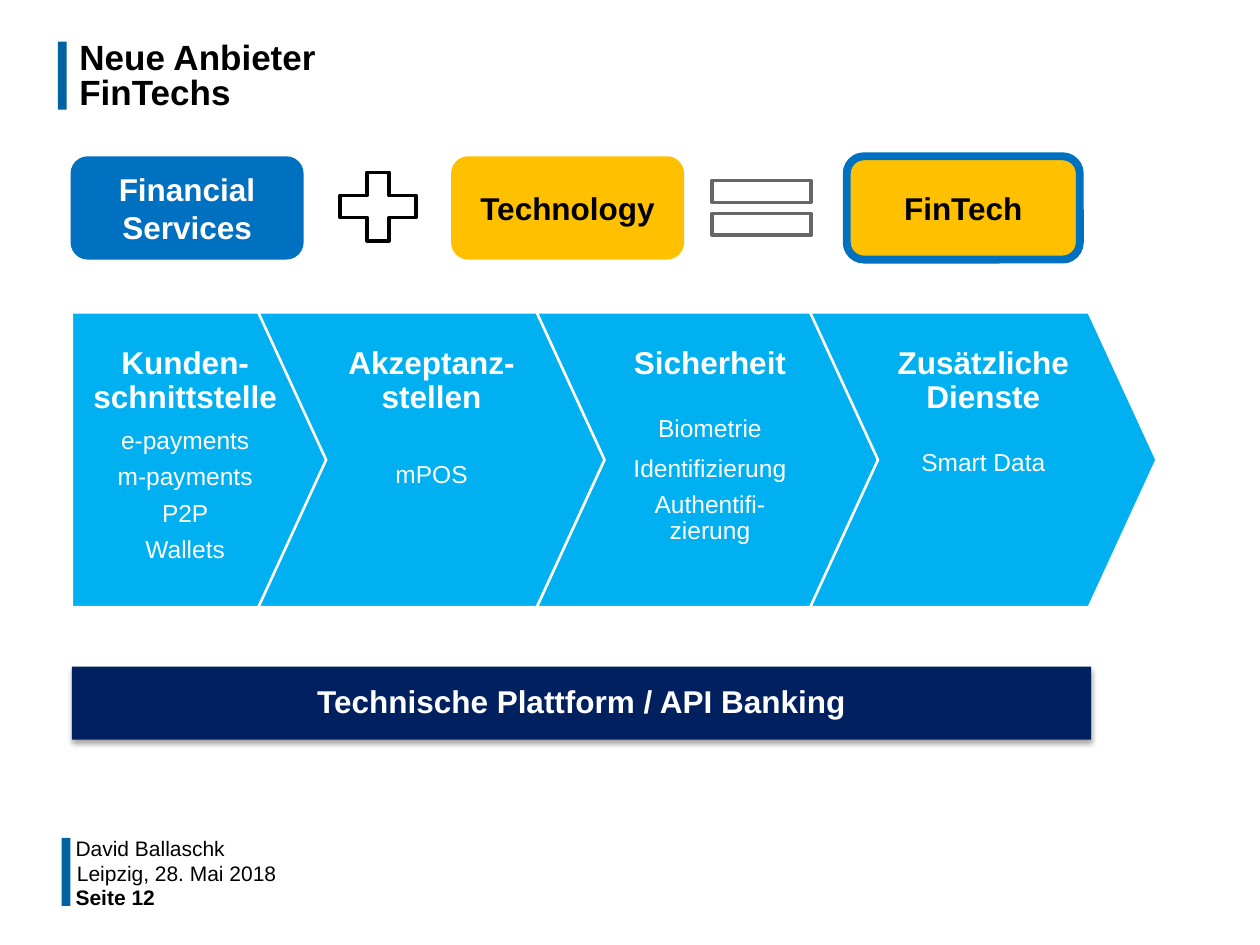
from lxml import etree
from pptx import Presentation
from pptx.dml.color import RGBColor
from pptx.enum.shapes import MSO_SHAPE
from pptx.enum.text import MSO_ANCHOR, PP_ALIGN
from pptx.oxml.ns import qn
from pptx.util import Inches, Pt

RECTANGLE, ROUNDED = MSO_SHAPE.RECTANGLE, MSO_SHAPE.ROUNDED_RECTANGLE
PLUS, EQUAL = MSO_SHAPE.MATH_PLUS, MSO_SHAPE.MATH_EQUAL
PENTAGON, CHEVRON = MSO_SHAPE.PENTAGON, MSO_SHAPE.CHEVRON
TOP, MIDDLE = MSO_ANCHOR.TOP, MSO_ANCHOR.MIDDLE
LEFT, CENTER = PP_ALIGN.LEFT, PP_ALIGN.CENTER

TITLE = "Neue Anbieter \vFinTechs"
FORMULA = [
    (ROUNDED, (0.56, 1.24, 1.85, 0.82), "Financial Services", "blue", "white", None),
    (PLUS, (2.59, 1.27, 0.82, 0.74), "", "white", "black", ("black", 2)),
    (ROUNDED, (3.58, 1.24, 1.85, 0.82), "Technology", "amber", "black", None),
    (EQUAL, (5.51, 1.28, 1.07, 0.74), "", "white", "black", ("gray", 2)),
    (ROUNDED, (6.72, 1.24, 1.85, 0.82), "FinTech", "amber", "black", ("blue", 4.5)),
]
STEPS = [
    (PENTAGON, 0.57, 2.11, 0.294, "Kunden-schnittstelle", 7.2,
     [("e-payments", 5.6), ("m-payments", 5.6), ("P2P", 5.6), ("Wallets", 0)]),
    (CHEVRON, 2.05, 2.75, 0.23, "Akzeptanz-stellen", 26.8, [("mPOS", 0)]),
    (CHEVRON, 4.26, 2.75, 0.23, "Sicherheit", 20,
     [("Biometrie", 7.2), ("Identifizierung", 5.6), ("Authentifi-\vzierung", 0)]),
    (CHEVRON, 6.43, 2.75, 0.23, "Zusätzliche Dienste", 20, [("Smart Data", 0)]),
]
STEP_TOP, STEP_HEIGHT = 2.48, 2.34
PLATFORM = "Technische Plattform / API Banking"
FOOTER = [
    ("David Ballaschk", 0.51, 6.64, False),
    ("Leipzig, 28. Mai 2018", 0.52, 6.84, False),
    ("Seite 12", 0.51, 7.03, True),
]
ACCENT_BARS = [(0.46, 0.33, 0.07, 0.54), (0.49, 6.65, 0.07, 0.54)]

THEME = {
    "font": "Arial",
    "sizes": {"title": 20, "heading": 18, "item": 14, "footer": 12},
    "colors": {"black": "000000", "white": "FFFFFF", "gray": "666666",
               "accent": "0062A1", "blue": "0070C0", "amber": "FFC000",
               "sky": "00B0F0", "navy": "002060"},
}


def color(name):
    return RGBColor.from_string(THEME["colors"][name])


def apply(target, values):
    for name, value in values.items():
        setattr(target, name, value)


def format_frame(frame, anchor, insets=(0.1, 0.05, 0.1, 0.05)):
    sides = ("margin_left", "margin_top", "margin_right", "margin_bottom")
    apply(frame, {"word_wrap": True, "vertical_anchor": anchor})
    apply(frame, {side: Inches(inset) for side, inset in zip(sides, insets)})


def write(paragraph, text, size, ink, bold=False, align=CENTER, spacing=1.0, after=0):
    paragraph.text = text
    apply(paragraph, {"alignment": align, "line_spacing": spacing,
                      "space_before": Pt(0), "space_after": Pt(after)})
    for run in paragraph.runs:
        apply(run.font, {"name": THEME["font"], "size": Pt(THEME["sizes"][size]),
                         "bold": bold})
        run.font.color.rgb = color(ink)


def add_shape(slide, kind, box, fill, line=None):
    shape = slide.shapes.add_shape(kind, *map(Inches, box))
    shape.shadow.inherit = False
    shape.fill.solid()
    shape.fill.fore_color.rgb = color(fill)
    if line:
        shape.line.color.rgb = color(line[0])
        shape.line.width = Pt(line[1])
    else:
        shape.line.fill.background()
    return shape


def add_drop_shadow(shape):
    effects = shape.element.spPr.find(qn("a:effectLst"))
    shadow = etree.SubElement(effects, qn("a:outerShdw"), blurRad=str(Pt(3.1)),
                              dist=str(Pt(1.8)), dir="5400000", rotWithShape="0")
    shade = etree.SubElement(shadow, qn("a:srgbClr"), val=THEME["colors"]["black"])
    etree.SubElement(shade, qn("a:alpha"), val="35000")


def add_title(slide):
    title = slide.shapes.title
    apply(title, {"left": Inches(0.53), "top": Inches(0.28),
                  "width": Inches(8.87), "height": Inches(0.71)})
    format_frame(title.text_frame, TOP)
    write(title.text_frame.paragraphs[0], TITLE, "title", "black", True, LEFT, Pt(20.4))


def add_formula(slide):
    for kind, box, text, fill, ink, line in FORMULA:
        shape = add_shape(slide, kind, box, fill, line)
        if text:
            format_frame(shape.text_frame, MIDDLE)
            write(shape.text_frame.paragraphs[0], text, "heading", ink, True)


def add_steps(slide):
    for kind, left, width, point, heading, gap, items in STEPS:
        box = (left, STEP_TOP, width, STEP_HEIGHT)
        shape = add_shape(slide, kind, box, "sky", ("white", 1.5))
        shape.adjustments[0] = point
        frame = shape.text_frame
        format_frame(frame, TOP, (0, 0.28, 0, 0))
        write(frame.paragraphs[0], heading, "heading", "white", True,
              spacing=0.9, after=gap)
        for item, after in items:
            write(frame.add_paragraph(), item, "item", "white", spacing=0.9, after=after)


def add_platform(slide):
    shape = add_shape(slide, RECTANGLE, (0.57, 5.29, 8.09, 0.58), "navy")
    add_drop_shadow(shape)
    format_frame(shape.text_frame, MIDDLE, (0, 0, 0, 0))
    write(shape.text_frame.paragraphs[0], PLATFORM, "heading", "white", True, spacing=0.9)


def add_footer(slide):
    for text, left, top, bold in FOOTER:
        box = slide.shapes.add_textbox(*map(Inches, (left, top, 2.31, 0.18)))
        format_frame(box.text_frame, MIDDLE, (0.09, 0.04, 0.09, 0.04))
        write(box.text_frame.paragraphs[0], text, "footer", "black", bold, LEFT)


def main():
    presentation = Presentation()
    apply(presentation, {"slide_width": Inches(10), "slide_height": Inches(7.5)})
    slide = presentation.slides.add_slide(presentation.slide_layouts[5])
    for box in ACCENT_BARS:
        add_shape(slide, RECTANGLE, box, "accent")
    add_title(slide)
    add_formula(slide)
    add_steps(slide)
    add_platform(slide)
    add_footer(slide)
    presentation.save("out.pptx")


if __name__ == "__main__":
    main()
